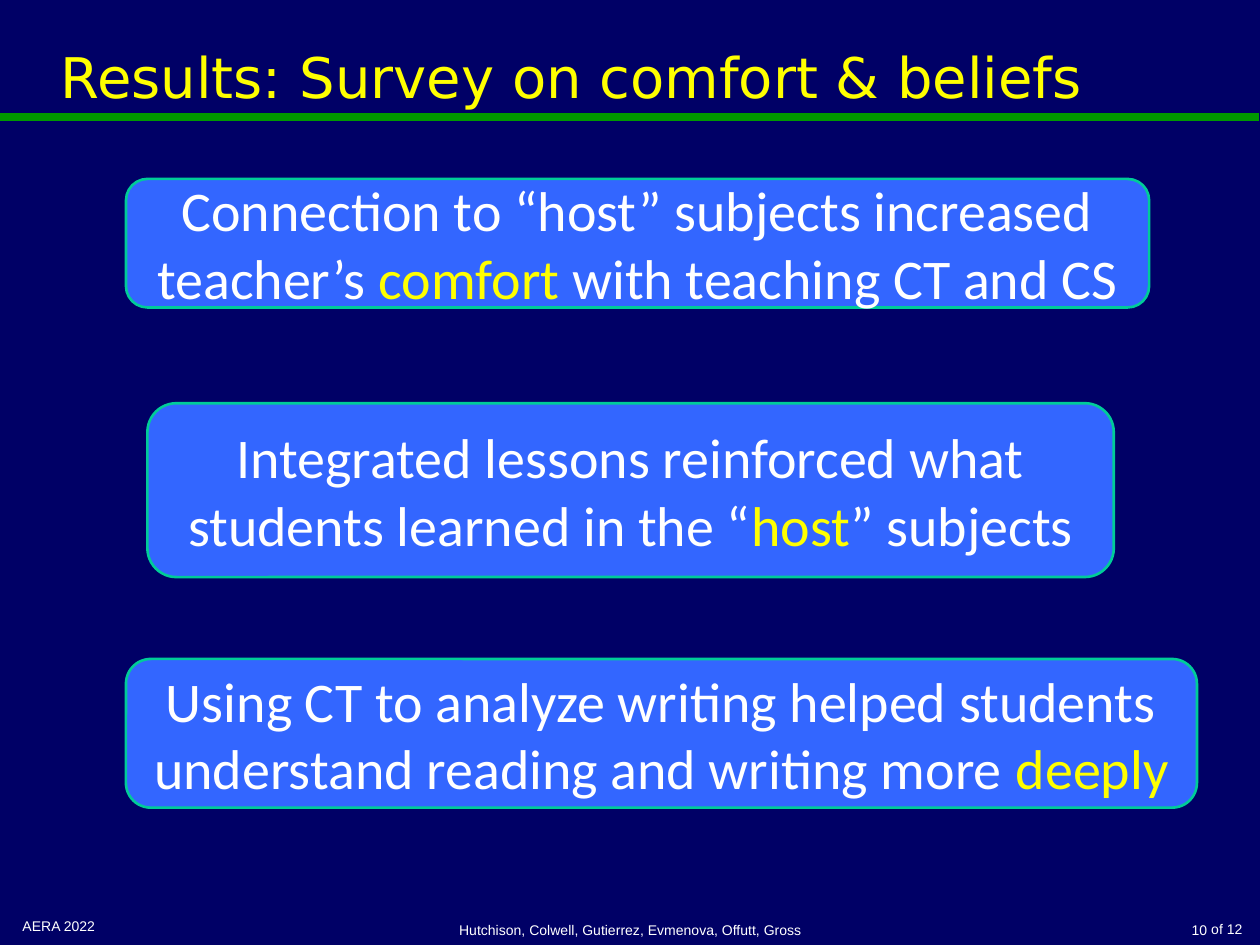
from lxml import etree
from pptx import Presentation
from pptx.dml.color import RGBColor
from pptx.enum.shapes import MSO_CONNECTOR, MSO_SHAPE
from pptx.enum.text import MSO_ANCHOR, PP_ALIGN
from pptx.oxml.ns import qn
from pptx.util import Inches, Pt

STRAIGHT = MSO_CONNECTOR.STRAIGHT
ROUNDED = MSO_SHAPE.ROUNDED_RECTANGLE
TOP, MIDDLE, BOTTOM = MSO_ANCHOR.TOP, MSO_ANCHOR.MIDDLE, MSO_ANCHOR.BOTTOM
LEFT, CENTER, RIGHT = PP_ALIGN.LEFT, PP_ALIGN.CENTER, PP_ALIGN.RIGHT

NAVY, GREEN, BLUE, TEAL = "000066", "009900", "3366FF", "00CC99"
WHITE, YELLOW = "FFFFFF", "FFFF00"

FINDINGS = [
    ((1, 1.42, 8.12, 1.02), [
        ("Connection to “host” subjects increased teacher’s ", WHITE),
        ("comfort", YELLOW),
        (" with teaching CT and CS", WHITE)]),
    ((1.17, 3.2, 7.67, 1.38), [
        ("Integrated lessons reinforced what students learned in the “", WHITE),
        ("host", YELLOW),
        ("” subjects", WHITE)]),
    ((1, 5.23, 8.5, 1.18), [
        ("Using CT to analyze writing helped students understand reading and writing more ", WHITE),
        ("deeply", YELLOW)]),
]

FOOTERS = [
    ((0.08, 7.23, 2.33, 0.26), "AERA 2022", LEFT, TOP),
    ((3.42, 7.23, 3.17, 0.27), "Hutchison, Colwell, Gutierrez, Evmenova, Offutt, Gross", CENTER, BOTTOM),
    ((7.87, 7.23, 1.81, 0.27), "10", RIGHT, BOTTOM),
    ((9.5, 7.26, 0.46, 0.24), "of 12", RIGHT, TOP),
]


def color(hex_code):
    """Turn a hex string into a colour."""
    return RGBColor.from_string(hex_code)


def inches(box):
    """Convert a box of numbers to lengths."""
    return [Inches(length) for length in box]


def write(frame, runs, font, size, align, anchor):
    """Fill a text frame with one paragraph of coloured runs."""
    frame.word_wrap = True
    frame.vertical_anchor = anchor
    paragraph = frame.paragraphs[0]
    paragraph.alignment = align
    for words, hex_code in runs:
        run = paragraph.add_run()
        run.text = words
        run.font.name = font
        run.font.size = Pt(size)
        run.font.color.rgb = color(hex_code)


def add_label(slide, box, runs, font, size, align, anchor):
    """Place a text box."""
    label = slide.shapes.add_textbox(*inches(box))
    write(label.text_frame, runs, font, size, align, anchor)


def add_header(slide, box):
    """Place the title and the full-width rule beneath it."""
    left, top, width, height = box
    rule_y = Inches(top + 0.95)
    rule = slide.shapes.add_connector(STRAIGHT, 0, rule_y, Inches(9.99), rule_y)
    rule.line.color.rgb = color(GREEN)
    rule.line.width = Pt(4.5)
    etree.SubElement(rule._element.spPr, qn("a:effectLst"))
    add_label(slide, box, [("Results: Survey on comfort & beliefs", YELLOW)],
              "DejaVu Sans", 32, CENTER, MIDDLE)


def add_finding(slide, box, runs):
    """Place one rounded panel with a survey finding."""
    panel = slide.shapes.add_shape(ROUNDED, *inches(box))
    panel.shadow.inherit = False
    panel.fill.solid()
    panel.fill.fore_color.rgb = color(BLUE)
    panel.line.color.rgb = color(TEAL)
    panel.line.width = Pt(1.5)
    write(panel.text_frame, runs, "Calibri", 32, CENTER, MIDDLE)


def main():
    """Build and save the slide."""
    deck = Presentation()
    deck.slide_width, deck.slide_height = Inches(10), Inches(7.5)
    slide = deck.slides.add_slide(deck.slide_layouts[6])
    slide.background.fill.solid()
    slide.background.fill.fore_color.rgb = color(NAVY)
    add_header(slide, (0.08, -0.02, 8.92, 1.25))
    for box, words, align, anchor in FOOTERS:
        add_label(slide, box, [(words, WHITE)], "Arial", 8, align, anchor)
    for box, runs in FINDINGS:
        add_finding(slide, box, runs)
    deck.save("out.pptx")


if __name__ == "__main__":
    main()
